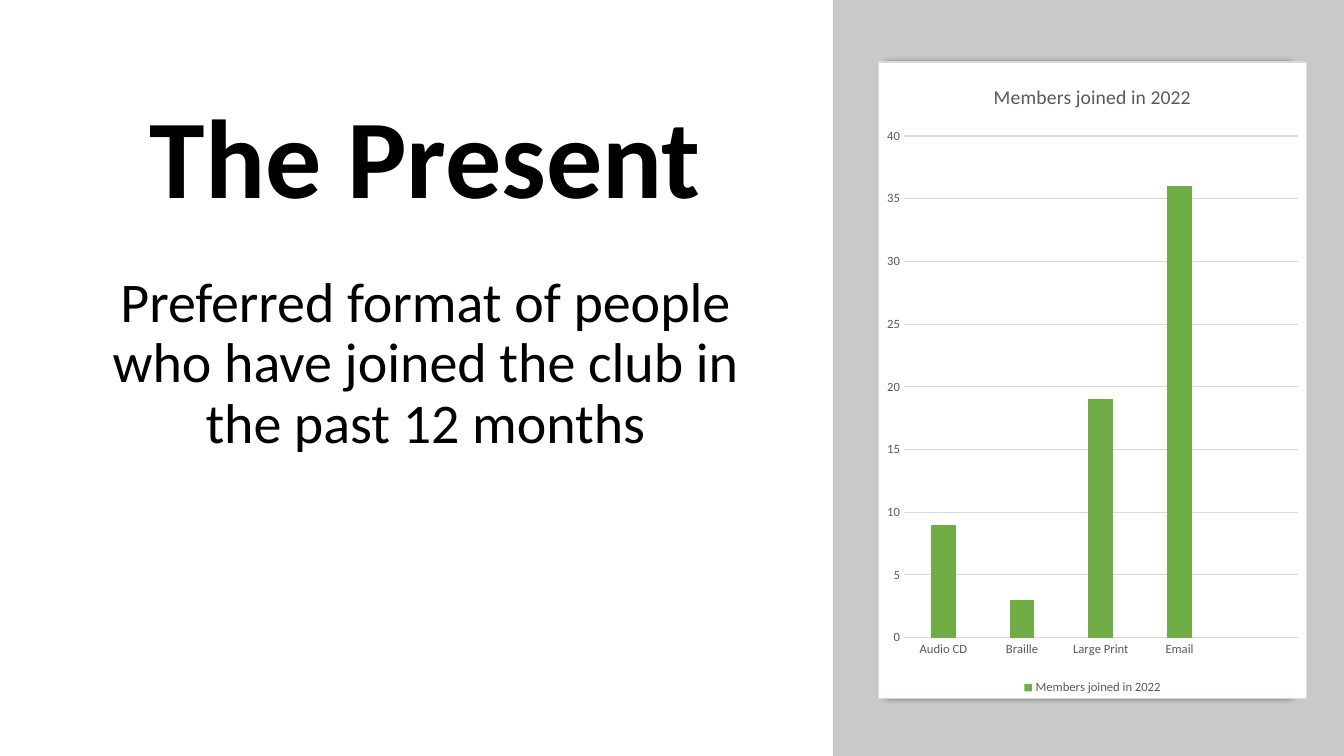
"""Build the slide on the preferred formats of members who joined in 2022."""
from pptx import Presentation
from pptx.chart import data
from pptx.dml.color import RGBColor
from pptx.enum import chart as ch, shapes, text
from pptx.oxml import parse_xml
from pptx.oxml.ns import nsdecls, qn
from pptx.util import Inches, Pt

BLACK = RGBColor(0x00, 0x00, 0x00)
WHITE = RGBColor(0xFF, 0xFF, 0xFF)
SILVER = RGBColor(0xC8, 0xCA, 0xCA)
RULE = RGBColor(0xD9, 0xD9, 0xD9)
LABEL = RGBColor(0x59, 0x59, 0x59)
GREEN = RGBColor(0x70, 0xAD, 0x47)
FONT = "Calibri"


def style_font(font, size, color, bold=False):
    for name, value in {"name": FONT, "size": Pt(size), "bold": bold}.items():
        setattr(font, name, value)
    font.color.rgb = color


prs = Presentation()
prs.slide_width, prs.slide_height = Inches(13.33), Inches(7.5)
slide = prs.slides.add_slide(prs.slide_layouts[5])

heading = slide.shapes.title
heading.left, heading.top = Inches(0.71), Inches(0.69)
heading.width, heading.height = Inches(7.02), Inches(1.83)
summary = slide.shapes.add_textbox(Inches(0.71), Inches(2.67), Inches(7.02), Inches(4.14))

for box, wording, size, bold, anchor, before in (
    (heading, "The Present", 80, True, text.MSO_ANCHOR.MIDDLE, 0),
    (summary, "Preferred format of people who have joined the club in the past 12 months",
     40, False, text.MSO_ANCHOR.TOP, 10),
):
    frame = box.text_frame
    frame.text = wording
    frame.word_wrap = True
    frame.auto_size = text.MSO_AUTO_SIZE.NONE
    frame.vertical_anchor = anchor
    paragraph = frame.paragraphs[0]
    layout = {"alignment": text.PP_ALIGN.CENTER, "line_spacing": 0.9, "space_before": Pt(before)}
    for name, value in layout.items():
        setattr(paragraph, name, value)
    style_font(paragraph.runs[0].font, size, BLACK, bold)

side_band = slide.shapes.add_shape(
    shapes.MSO_SHAPE.RECTANGLE, Inches(8.26), 0, Inches(5.07), Inches(7.5))
side_band.shadow.inherit = False
side_band.fill.solid()
side_band.fill.fore_color.rgb = SILVER
side_band.line.fill.background()

card = slide.shapes.add_shape(
    shapes.MSO_SHAPE.ROUNDED_RECTANGLE, Inches(8.79), Inches(0.61), Inches(4.01), Inches(6.28))
card.adjustments[0] = 0
card.shadow.inherit = False
card.fill.solid()
card.fill.fore_color.rgb = WHITE
card.line.color.rgb = SILVER
card.line.width = Pt(0.75)
card.element.spPr.find(qn("a:effectLst")).append(parse_xml(
    f'<a:outerShdw {nsdecls("a")} blurRad="{Pt(4.5)}" dist="{Pt(1.5)}" dir="5400000" '
    'algn="t" rotWithShape="0"><a:srgbClr val="000000"><a:alpha val="63000"/>'
    '</a:srgbClr></a:outerShdw>'))

members = data.CategoryChartData()
members.categories = ["Audio CD", "Braille", "Large Print", "Email", ""]
members.add_series("Members joined in 2022", [9, 3, 19, 36, None])
chart = slide.shapes.add_chart(
    ch.XL_CHART_TYPE.COLUMN_CLUSTERED,
    Inches(8.71), Inches(0.61), Inches(4.25), Inches(6.33), members).chart
style_font(chart.font, 10, BLACK)
chart.element.find(qn("c:chart")).addnext(parse_xml(
    f'<c:spPr {nsdecls("c", "a")}><a:solidFill><a:srgbClr val="{WHITE}"/></a:solidFill>'
    f'<a:ln w="{Pt(0.75)}"><a:solidFill><a:srgbClr val="{RULE}"/></a:solidFill></a:ln></c:spPr>'))

chart.has_title = True
chart.chart_title.include_in_layout = False
chart_heading = chart.chart_title.text_frame
chart_heading.text = "Members joined in 2022"
style_font(chart_heading.paragraphs[0].runs[0].font, 14, LABEL)

chart.has_legend = True
chart.legend.position = ch.XL_LEGEND_POSITION.BOTTOM
chart.legend.include_in_layout = False
style_font(chart.legend.font, 9, LABEL)

for axis in (chart.category_axis, chart.value_axis):
    axis.major_tick_mark = axis.minor_tick_mark = ch.XL_TICK_MARK.NONE
    style_font(axis.tick_labels.font, 9, LABEL)
counts = chart.value_axis
for name, value in {"minimum_scale": 0, "maximum_scale": 40, "major_unit": 5}.items():
    setattr(counts, name, value)
counts.format.line.fill.background()
for rule in (chart.category_axis.format.line, counts.major_gridlines.format.line):
    rule.color.rgb = RULE
    rule.width = Pt(0.75)

columns = chart.plots[0]
for name, value in {"gap_width": 219, "overlap": -27, "vary_by_categories": False}.items():
    setattr(columns, name, value)
columns.series[0].format.fill.solid()
columns.series[0].format.fill.fore_color.rgb = GREEN

prs.save("out.pptx")
